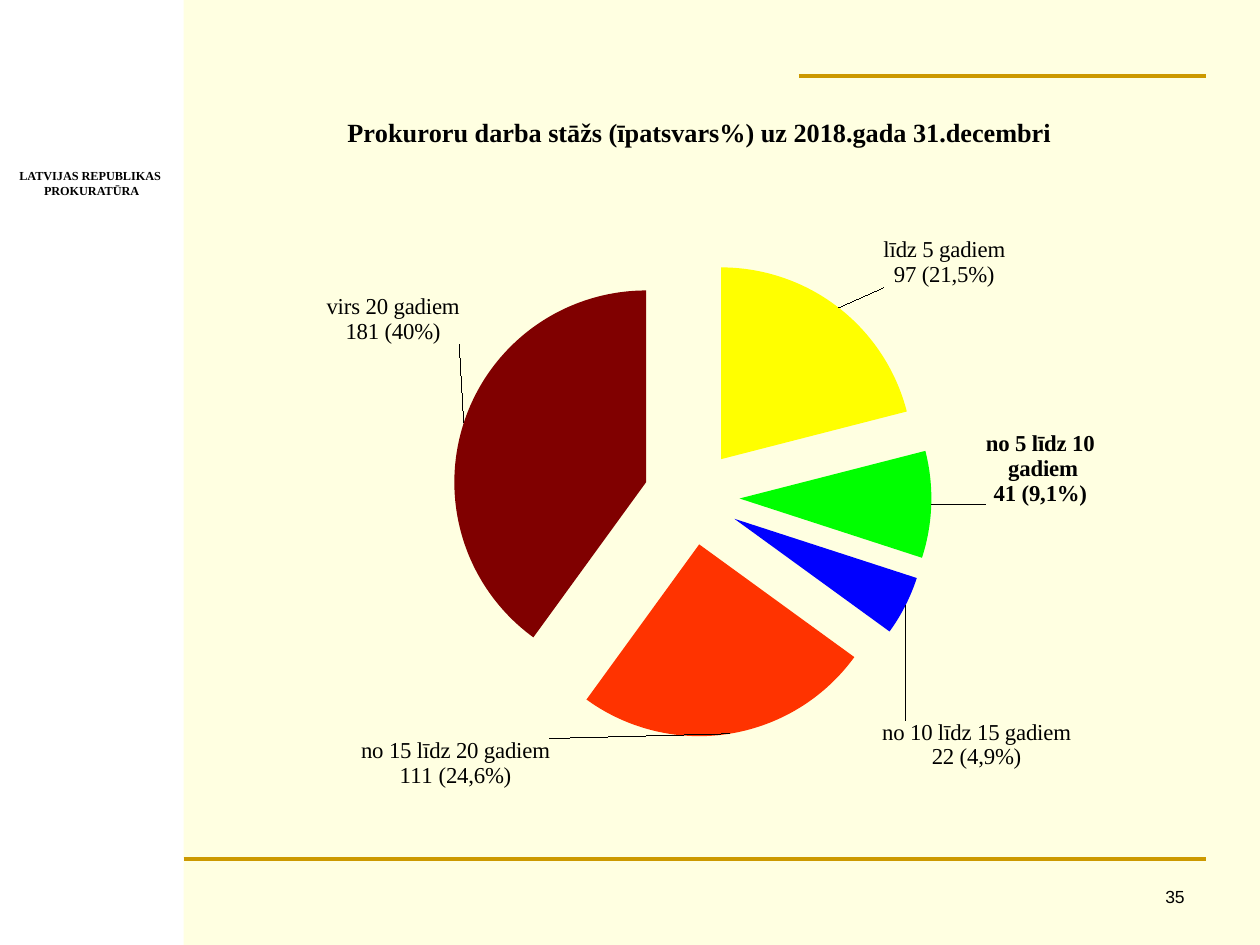
from dataclasses import dataclass

from lxml.etree import SubElement
from pptx import Presentation
from pptx.chart.data import CategoryChartData
from pptx.dml.color import RGBColor
from pptx.enum.chart import XL_CHART_TYPE as ChartType, XL_LABEL_POSITION as LabelPosition
from pptx.enum.shapes import MSO_CONNECTOR as Connector, MSO_SHAPE as Preset
from pptx.enum.text import PP_ALIGN as Align
from pptx.oxml import parse_xml
from pptx.oxml.ns import nsdecls, qn
from pptx.util import Pt


@dataclass(frozen=True)
class Theme:
    background: str = "FFFFE1"
    sidebar: str = "FFFFFF"
    rule: str = "CC9900"
    ink: str = "000000"
    serif: str = "Times New Roman"
    sans: str = "Arial"
    office_size: float = 7
    number_size: float = 10
    title_size: float = 15
    label_size: float = 13
    rule_width: float = 2.25


@dataclass(frozen=True)
class Rule:
    left: float
    right: float
    y: float


@dataclass(frozen=True)
class TextBlock:
    left: float
    top: float
    width: float
    height: float
    text: str
    align: Align
    font: str
    size: float
    bold: bool = False
    wrap: bool = True


@dataclass(frozen=True)
class Tenure:
    category: str
    share: int
    color: str
    label: str
    shift: tuple[float, float]  # label offset from its place beside the slice
    bold: bool = False


THEME = Theme()
SLIDE_WIDTH, SLIDE_HEIGHT = 720, 540
SIDEBAR_WIDTH, RULE_END = 105, 689
TOP_RULE_Y, BOTTOM_RULE_Y = 43.2, 491
CHART_WIDTH = SLIDE_WIDTH - SIDEBAR_WIDTH
CHART_HEIGHT = BOTTOM_RULE_Y - TOP_RULE_Y

RULES = [Rule(SIDEBAR_WIDTH, RULE_END, BOTTOM_RULE_Y),
         Rule(456.5, RULE_END, TOP_RULE_Y)]

TEXT_BLOCKS = [
    TextBlock(3.6, 92.9, 95.8, 23.8, "LATVIJAS REPUBLIKAS\n PROKURATŪRA", Align.CENTER,
              THEME.serif, THEME.office_size, bold=True, wrap=False),
    TextBlock(534.2, 502.6, 149.8, 25.2, "35", Align.RIGHT, THEME.sans, THEME.number_size),
]

TITLE = "Prokuroru darba stāžs (īpatsvars%) uz 2018.gada 31.decembri"
TENURES = [
    Tenure("līdz 5 gadiem", 21, "FFFF00", "līdz 5 gadiem\n97 (21,5%)", (23, -8)),
    Tenure("no 5 līdz 10 gadiem", 9, "00FF00", "no 5 līdz 10\n gadiem\n41 (9,1%)",
           (27, -20.5), bold=True),
    Tenure("no 10 līdz 15 gadiem", 5, "0000FF", "no 10 līdz 15 gadiem\n22 (4,9%)",
           (-17, 63.5)),
    Tenure("no 15 līdz 20 gadiem", 25, "FF3300", "no 15 līdz 20 gadiem\n111 (24,6%)",
           (-211, -1.5)),
    Tenure("virs 20 gadiem", 40, "800000", "virs 20 gadiem\n181 (40%)", (1.5, -43.5)),
]


def rgb(color: str) -> RGBColor:
    return RGBColor.from_string(color)


def style_font(font, name: str, size: float, bold: bool = False) -> None:
    font.name, font.size, font.bold = name, Pt(size), bold
    font.color.rgb = rgb(THEME.ink)


def style_runs(frame, name: str, size: float, bold: bool = False) -> None:
    for paragraph in frame.paragraphs:
        for run in paragraph.runs:
            style_font(run.font, name, size, bold)


def draw_rule(slide, rule: Rule) -> None:
    line = slide.shapes.add_connector(
        Connector.STRAIGHT, Pt(rule.left), Pt(rule.y), Pt(rule.right), Pt(rule.y))
    line.line.color.rgb = rgb(THEME.rule)
    line.line.width = Pt(THEME.rule_width)
    SubElement(line._element.spPr, qn("a:effectLst"))


def draw_text(slide, block: TextBlock) -> None:
    frame = slide.shapes.add_textbox(
        Pt(block.left), Pt(block.top), Pt(block.width), Pt(block.height)).text_frame
    frame.word_wrap = block.wrap
    frame.text = block.text
    for paragraph in frame.paragraphs:
        paragraph.alignment = block.align
    style_runs(frame, block.font, block.size, block.bold)


def layout_xml(modes: dict[str, str], **lengths: float):
    """Build a manual layout from lengths in points within the chart."""
    extents = {"x": CHART_WIDTH, "w": CHART_WIDTH, "y": CHART_HEIGHT, "h": CHART_HEIGHT}
    settings = modes | {tag: length / extents[tag] for tag, length in lengths.items()}
    children = "".join(f'<c:{tag} val="{value}"/>' for tag, value in settings.items())
    return parse_xml(f'<c:layout {nsdecls("c")}><c:manualLayout>{children}'
                     '</c:manualLayout></c:layout>')


def remove_layout(part) -> None:
    for old in part.findall(qn("c:layout")):
        part.remove(old)


def place_title(chart) -> None:
    chart.has_title = True
    frame = chart.chart_title.text_frame
    frame.text = TITLE
    style_runs(frame, THEME.serif, THEME.title_size, bold=True)
    title = chart.chart_title._element
    remove_layout(title)
    title.find(qn("c:tx")).addnext(
        layout_xml({"xMode": "edge", "yMode": "edge"}, x=90.8, y=20.1))


def place_plot(chart) -> None:
    area = chart._chartSpace.chart.plotArea
    remove_layout(area)
    area.insert(0, layout_xml({"layoutTarget": "inner", "xMode": "edge", "yMode": "edge"},
                              x=76.3, y=103.9, w=428, h=274))


def draw_slice(series, index: int, tenure: Tenure) -> None:
    point = series.points[index]
    point.format.fill.solid()
    point.format.fill.fore_color.rgb = rgb(tenure.color)
    point.format.line.fill.background()
    label = point.data_label
    label.text_frame.text = tenure.label
    style_runs(label.text_frame, THEME.serif, THEME.label_size, tenure.bold)
    label.position = LabelPosition.OUTSIDE_END
    entry = series.data_labels._element.findall(qn("c:dLbl"))[index]
    x, y = tenure.shift
    entry.find(qn("c:idx")).addnext(layout_xml({}, x=x, y=y))


def draw_pie(slide) -> None:
    data = CategoryChartData()
    data.categories = [tenure.category for tenure in TENURES]
    data.add_series("Series 1", [tenure.share for tenure in TENURES])
    chart = slide.shapes.add_chart(
        ChartType.PIE, Pt(SIDEBAR_WIDTH), Pt(TOP_RULE_Y), Pt(CHART_WIDTH),
        Pt(CHART_HEIGHT), data).chart
    chart.has_legend = False
    style_font(chart.font, THEME.serif, THEME.number_size)
    place_title(chart)
    place_plot(chart)

    plot = chart.plots[0]
    plot.vary_by_categories = True
    series = plot.series[0]
    labels = series.data_labels
    labels.show_value = False
    labels.show_category_name = labels.show_percentage = True
    style_font(labels.font, THEME.serif, THEME.label_size, bold=True)
    for index, tenure in enumerate(TENURES):
        draw_slice(series, index, tenure)

    # Pull all slices apart
    series._element.find(qn("c:dPt")).addprevious(
        parse_xml(f'<c:explosion {nsdecls("c")} val="25"/>'))


def main() -> None:
    deck = Presentation()
    deck.slide_width, deck.slide_height = Pt(SLIDE_WIDTH), Pt(SLIDE_HEIGHT)
    slide = deck.slides.add_slide(deck.slide_layouts[6])

    # Background and sidebar
    slide.background.fill.solid()
    slide.background.fill.fore_color.rgb = rgb(THEME.background)
    sidebar = slide.shapes.add_shape(
        Preset.RECTANGLE, 0, 0, Pt(SIDEBAR_WIDTH), Pt(SLIDE_HEIGHT))
    sidebar.shadow.inherit = False
    sidebar.fill.solid()
    sidebar.fill.fore_color.rgb = rgb(THEME.sidebar)
    sidebar.line.fill.background()

    # Rules, office name and page number
    for rule in RULES:
        draw_rule(slide, rule)
    for block in TEXT_BLOCKS:
        draw_text(slide, block)

    # Pie of years in service
    draw_pie(slide)
    deck.save("out.pptx")


if __name__ == "__main__":
    main()
